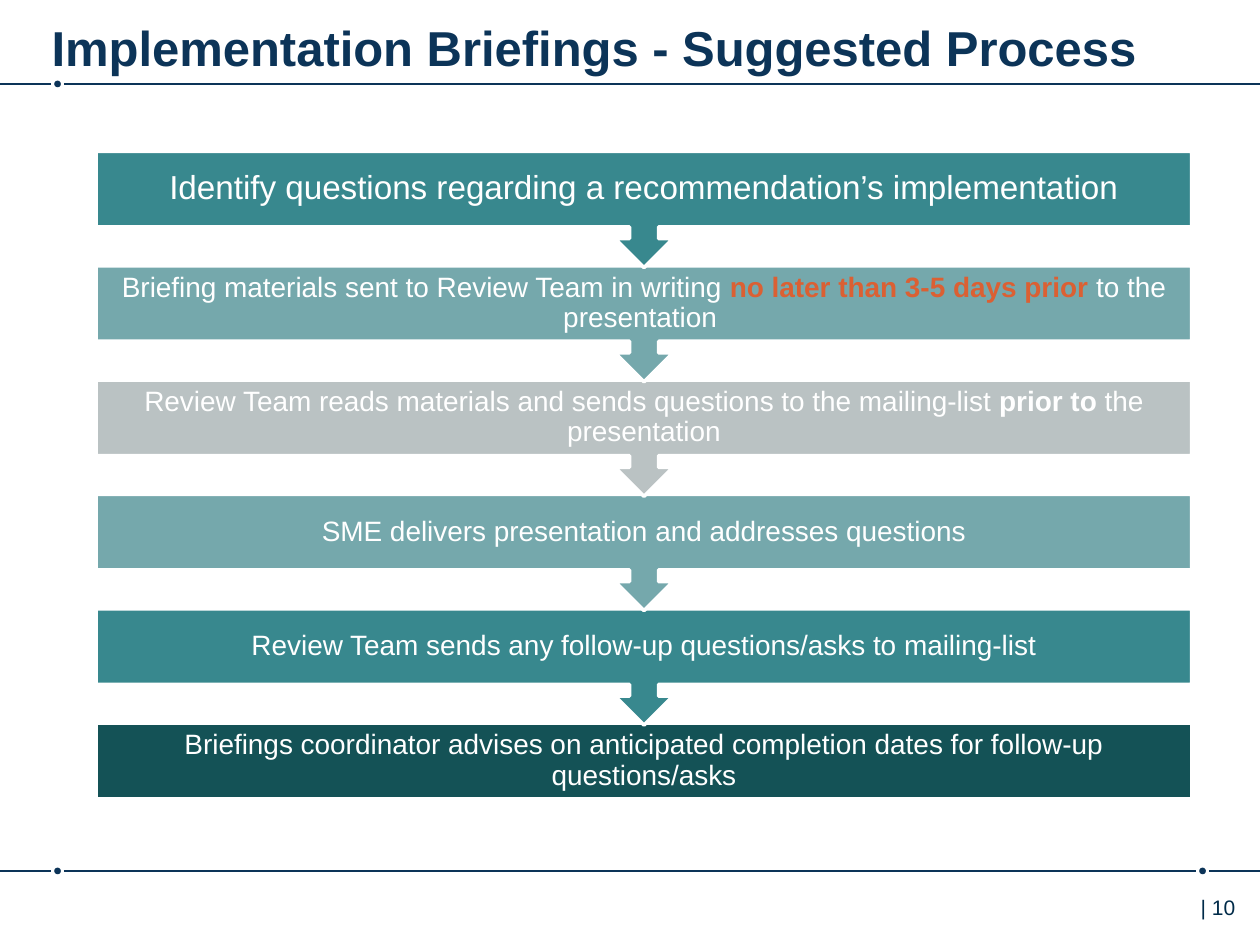
from pptx import Presentation
from pptx import util as u
from pptx.dml.color import RGBColor
from pptx.enum import shapes, text
from pptx.oxml.ns import qn
from lxml import etree

Pt = u.Pt
NAVY, WHITE, ORANGE = "0C3458", "FFFFFF", "DB6033"
LEFT, TOP, WIDE, HIGH = 55, 86.5, 626, 43.2   # first step box
PITCH, CALL = 65.35, 66.4                     # step distance, callout height

# Fill, text size, inset, runs of (text, bold, colour)
STEPS = [
    ("38888E", 19, 10.5, [
        ("Identify questions regarding a recommendation’s implementation", False, WHITE)]),
    ("75A8AC", 16, 8.8, [
        ("Briefing materials sent to Review Team in writing ", False, WHITE),
        ("no later than 3-5 days prior ", True, ORANGE),
        ("to the presentation ", False, WHITE)]),
    ("BAC2C3", 16, 8.8, [
        ("Review Team reads materials and sends questions to the mailing-list ", False, WHITE),
        ("prior to ", True, WHITE),
        ("the presentation", False, WHITE)]),
    ("75A8AC", 16, 8.8, [
        ("SME delivers presentation and addresses questions", False, WHITE)]),
    ("38888E", 16, 8.8, [
        ("Review Team sends any follow-up questions/asks to mailing-list", False, WHITE)]),
    ("145256", 16, 8.8, [
        ("Briefings coordinator advises on anticipated completion dates "
         "for follow-up questions/asks", False, WHITE)]),
]


def tint(code):
    return RGBColor.from_string(code)


def shape(slide, kind, box, fill, line=None):
    item = slide.shapes.add_shape(kind, *map(Pt, box))
    item.shadow.inherit = False
    item.fill.solid()
    item.fill.fore_color.rgb = tint(fill)
    if line:
        item.line.color.rgb = tint(line)
        item.line.width = Pt(2)
    else:
        item.line.fill.background()
    return item


def rule(slide, start, end, y):
    line = slide.shapes.add_connector(
        shapes.MSO_CONNECTOR.STRAIGHT, Pt(start), Pt(y), Pt(end), Pt(y))
    line.line.color.rgb = tint(NAVY)
    line.line.width = Pt(1)
    etree.SubElement(line._element.spPr, qn("a:effectLst"))


def dot(slide, x, y, size=3.8):
    shape(slide, shapes.MSO_SHAPE.OVAL,
          (x - size / 2, y - size / 2, size, size), NAVY)


def label(slide, box, insets, size, runs):
    """Add a text box with one paragraph; insets are left, top, right, bottom."""
    frame = slide.shapes.add_textbox(*map(Pt, box)).text_frame
    frame.word_wrap = True
    (frame.margin_left, frame.margin_top,
     frame.margin_right, frame.margin_bottom) = map(Pt, insets)
    para = frame.paragraphs[0]
    para.font.name = "Arial"
    para.font.size = Pt(size)
    same = len({run[1:] for run in runs}) == 1
    for words, bold, color in runs:
        run = para.add_run()
        run.text = words
        font = para.font if same else run.font
        font.bold = bold
        font.color.rgb = tint(color)
    return frame


def step(slide, index):
    fill, size, inset, runs = STEPS[index]
    y = TOP + index * PITCH
    if index == len(STEPS) - 1:
        shape(slide, shapes.MSO_SHAPE.RECTANGLE, (LEFT, y, WIDE, HIGH), fill, WHITE)
    else:
        call = shape(slide, shapes.MSO_SHAPE.UP_ARROW_CALLOUT,
                     (LEFT, y, WIDE, CALL), fill, WHITE)
        call.rotation = 180
    frame = label(slide, (LEFT, y, WIDE, HIGH), [inset] * 4, size, runs)
    frame.vertical_anchor = text.MSO_ANCHOR.MIDDLE
    para = frame.paragraphs[0]
    para.alignment = text.PP_ALIGN.CENTER
    para.line_spacing = 0.9


def main():
    deck = Presentation()
    deck.slide_width, deck.slide_height = Pt(720), Pt(540)
    slide = deck.slides.add_slide(deck.slide_layouts[6])

    # Rules with dots
    head, foot, near, far = 48, 497.7, 32.9, 687.2
    gap = 3.6
    for x, y in ((near, head), (near, foot), (far, foot)):
        dot(slide, x, y)
    for start, end, y in ((0, near - gap, head), (near + gap, 720, head),
                          (0, near - gap, foot), (near + gap, far - gap, foot),
                          (far + gap, 720, foot)):
        rule(slide, start, end, y)

    # Title and page number
    label(slide, (29.5, 3.6, 630.7, 35.3), (0, 6.5, 0, 3.6), 28,
          [("Implementation Briefings - Suggested Process", True, NAVY)])
    label(slide, (668.9, 507.6, 62.6, 28.8), (17.2, 3.6, 7.2, 3.6), 12,
          [("| 10", False, "002B49")])

    # Steps, last one first so that each arrow lies over the next box
    for index in reversed(range(len(STEPS))):
        step(slide, index)

    deck.save("out.pptx")


if __name__ == "__main__":
    main()
